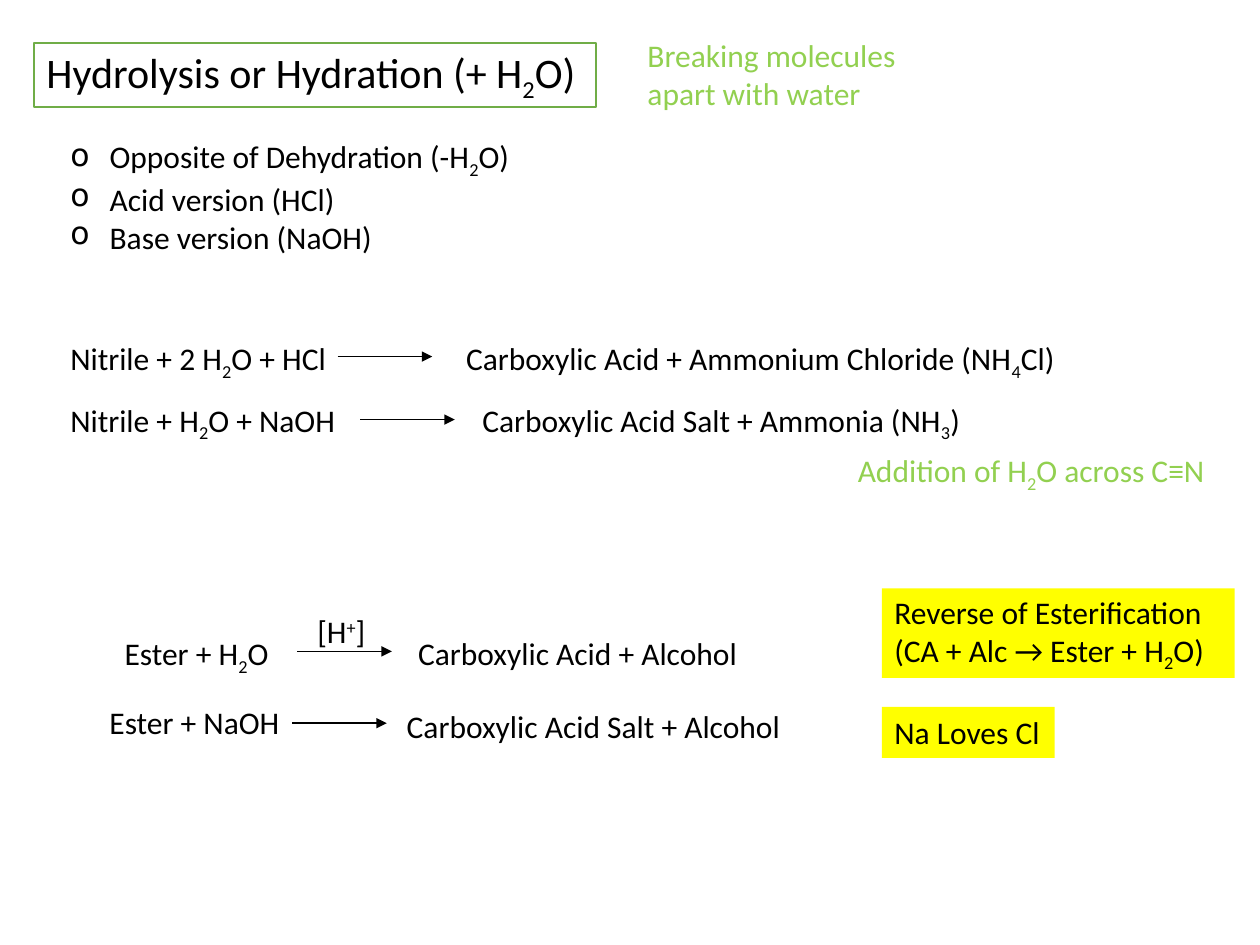
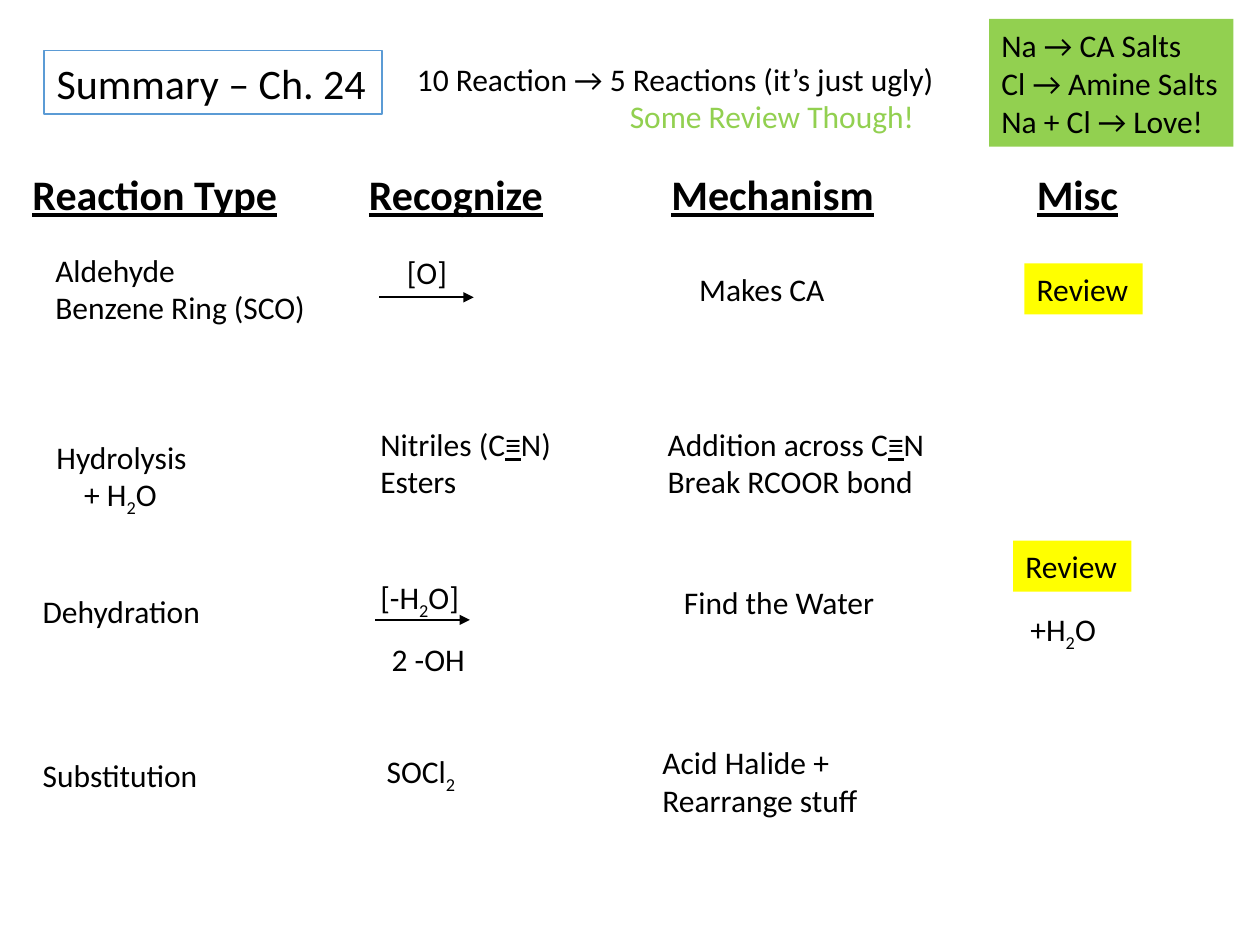
"""Build two organic chemistry review slides: hydrolysis and a chapter summary."""
import pptx
import pptx.dml.color
import pptx.enum.shapes
import pptx.enum.text
import pptx.oxml.ns
import pptx.util
from lxml import etree

SLIDE_WIDTH, SLIDE_HEIGHT = pptx.util.Inches(10), pptx.util.Inches(7.5)
COLUMNS, ROWS = 100, 75
ARROW_COLUMNS = 7.5
FONT = "Calibri"
BODY_SIZE, HEADING_SIZE = 18, 24
BLACK, WHITE, YELLOW, LIME = "000000", "FFFFFF", "FFFF00", "92D050"
GREEN, BLUE = "70AD47", "5B9BD5"
BASELINES = {"_": "-25000", "^": "30000"}
UNDERLINE = "~"


def color(hex_string):
    """Return the colour for a hex string."""
    return pptx.dml.color.RGBColor.from_string(hex_string)


def across(columns):
    """Return the length of a number of grid columns."""
    return int(SLIDE_WIDTH * columns / COLUMNS)


def down(rows):
    """Return the length of a number of grid rows."""
    return int(SLIDE_HEIGHT * rows / ROWS)


def split_marks(line):
    """Split a line into (mark, text) pairs; a mark styles the one character after it."""
    pieces, plain, letters = [], "", iter(line)
    for letter in letters:
        if letter in BASELINES or letter == UNDERLINE:
            pieces += [("", plain), (letter, next(letters))]
            plain = ""
        else:
            plain += letter
    return [piece for piece in pieces + [("", plain)] if piece[1]]


def write_line(paragraph, line, size, ink, heading):
    """Fill a paragraph with the styled runs of one line."""
    for mark, text in split_marks(line):
        run = paragraph.add_run()
        run.text = text
        run.font.name, run.font.size = FONT, pptx.util.Pt(size)
        run.font.color.rgb = color(ink)
        if heading:
            run.font.bold = run.font.underline = True
        if mark == UNDERLINE:
            run.font.underline = True
        elif mark:
            run._r.get_or_add_rPr().set("baseline", BASELINES[mark])


def fill_text(frame, lines, size, ink, wrap=False, heading=False):
    """Write lines into a text frame, one paragraph each."""
    frame.word_wrap = wrap
    frame.auto_size = pptx.enum.text.MSO_AUTO_SIZE.SHAPE_TO_FIT_TEXT
    for index, line in enumerate(lines):
        paragraph = frame.add_paragraph() if index else frame.paragraphs[0]
        paragraph.alignment = pptx.enum.text.PP_ALIGN.LEFT
        write_line(paragraph, line, size, ink, heading)


def text_height(line_count, size):
    """Return the height of a text block with its margins."""
    return pptx.util.Pt(line_count * size * 1.22) + pptx.util.Inches(0.1)


def add_note(shapes, column, row, width, *lines, size=BODY_SIZE, ink=BLACK,
             wrap=False, heading=False, rows_of_text=None):
    """Add plain text at a grid position."""
    height = text_height(rows_of_text or len(lines), size)
    note = shapes.add_textbox(across(column), down(row), across(width), height)
    fill_text(note.text_frame, lines, size, ink, wrap, heading)
    return note


def add_panel(shapes, column, row, width, *lines, fill=YELLOW, border=None, size=BODY_SIZE):
    """Add a filled rectangle with text and an optional border."""
    panel = shapes.add_shape(
        pptx.enum.shapes.MSO_SHAPE.RECTANGLE, across(column), down(row),
        across(width), text_height(len(lines), size))
    panel.shadow.inherit = False
    panel.fill.solid()
    panel.fill.fore_color.rgb = color(fill)
    if border:
        panel.line.color.rgb = color(border)
        panel.line.width = pptx.util.Pt(1)
    else:
        panel.line.fill.background()
    fill_text(panel.text_frame, lines, size, BLACK)


def add_title(shapes, column, row, width, title, border):
    """Add the framed slide title."""
    add_panel(shapes, column, row, width, title, fill=WHITE, border=border, size=HEADING_SIZE)


def add_arrow(shapes, column, row):
    """Add a reaction arrow pointing right."""
    arrow = shapes.add_connector(
        pptx.enum.shapes.MSO_CONNECTOR.STRAIGHT, across(column), down(row),
        across(column + ARROW_COLUMNS), down(row))
    arrow.line.color.rgb = color(BLACK)
    arrow.line.width = pptx.util.Pt(1)
    qn = pptx.oxml.ns.qn
    etree.SubElement(arrow.line._get_or_add_ln(), qn("a:tailEnd"), type="triangle")
    etree.SubElement(arrow._element.spPr, qn("a:effectLst"))


def add_reagent_arrow(shapes, arrow_at, label_at, width, reagent):
    """Add an arrow grouped with the reagent above it."""
    group = shapes.add_group_shape()
    add_arrow(group.shapes, *arrow_at)
    add_note(group.shapes, *label_at, width, reagent)


def add_bullets(shapes, column, row, width, *lines):
    """Add a list with hanging round bullets."""
    bullets = add_note(shapes, column, row, width, *lines)
    indent = across(3.12)
    for paragraph in bullets.text_frame.paragraphs:
        properties = paragraph._p.get_or_add_pPr()
        properties.set("marL", str(indent))
        properties.set("indent", str(-indent))
        etree.SubElement(properties, pptx.oxml.ns.qn("a:buChar"), char="o")


def build_hydrolysis(shapes):
    """Build the slide on hydrolysis reactions."""
    add_title(shapes, 2.7, 3.4, 44.6, "Hydrolysis or Hydration (+ H_2O)", GREEN)
    add_note(shapes, 50.4, 2.4, 22.9, "Breaking molecules apart with water",
             ink=LIME, wrap=True, rows_of_text=2)
    add_bullets(shapes, 4.6, 10.4, 37.4, "Opposite of Dehydration (-H_2O)",
                "Acid version (HCl)", "Base version (NaOH)")

    for column, row, width, text in (
        (4.6, 26.4, 22.7, "Nitrile + 2 H_2O + HCl"),
        (36, 26.4, 49.8, "Carboxylic Acid + Ammonium Chloride (NH_4Cl)"),
        (4.6, 31.3, 24, "Nitrile + H_2O + NaOH"),
        (37.3, 31.3, 40.5, "Carboxylic Acid Salt + Ammonia (NH_3)"),
        (8.9, 49.8, 14.3, "Ester + H_2O"),
        (32.2, 49.8, 27.6, "Carboxylic Acid + Alcohol"),
        (7.7, 55.3, 15.7, "Ester + NaOH"),
        (31.3, 55.6, 32, "Carboxylic Acid Salt + Alcohol"),
    ):
        add_note(shapes, column, row, width, text)
    for column, row in ((26.8, 28.3), (28.6, 33.3), (23.2, 57.4)):
        add_arrow(shapes, column, row)
    add_reagent_arrow(shapes, (23.6, 51.7), (24.2, 48.1), 6, "[H^+]")

    add_note(shapes, 67.1, 35.3, 30, "Addition of H_2O across C≡N", ink=LIME)
    add_panel(shapes, 70, 46.7, 28, "Reverse of Esterification", "(CA + Alc → Ester + H_2O)")
    add_panel(shapes, 70, 56.1, 13.7, "Na Loves Cl")


def build_summary(shapes):
    """Build the slide that sums up the chapter by reaction type."""
    add_title(shapes, 3.5, 4, 26.8, "Summary – Ch. 24", BLUE)
    add_note(shapes, 32.1, 4.3, 43.5, "10 Reaction → 5 Reactions (it’s just ugly)")
    add_note(shapes, 49, 7.2, 24.9, "Some Review Though!", ink=LIME)
    add_panel(shapes, 78.5, 1.5, 19.4, "Na → CA Salts", "Cl → Amine Salts",
              "Na + Cl → Love!", fill=LIME)

    for column, width, heading in ((1.6, 21.7, "Reaction Type"), (28.3, 16, "Recognize"),
                                   (52.3, 18.3, "Mechanism"), (81.3, 8.5, "Misc")):
        add_note(shapes, column, 12.9, width, heading, size=HEADING_SIZE, heading=True)

    for column, row, width, *lines in (
        (3.4, 19.4, 22.1, "Aldehyde", "Benzene Ring (SCO)"),
        (54.5, 20.9, 12.1, "Makes CA"),
        (3.5, 34.3, 12.4, "Hydrolysis"),
        (5.7, 37.2, 8, "+ H_2O"),
        (2.4, 46.5, 14.7, "Dehydration"),
        (30.1, 50.3, 7.9, "2 -OH"),
        (53.3, 45.8, 17.3, "Find the Water"),
        (80.8, 47.9, 7.4, "+H_2O"),
        (2.4, 59.5, 14.5, "Substitution"),
        (29.7, 59.2, 7.6, "SOCl_2"),
        (51.6, 58.5, 17.7, "Acid Halide +", "Rearrange stuff"),
    ):
        add_note(shapes, column, row, width, *lines)
    add_note(shapes, 29.2, 33.2, 17.6, "Nitriles (C~≡N)", "Esters", wrap=True)
    add_note(shapes, 52, 33.2, 23.8, "Addition across C~≡N", "Break RCOOR bond", wrap=True)

    add_reagent_arrow(shapes, (30.1, 23.6), (31.3, 19.6), 5.2, "[O]")
    add_reagent_arrow(shapes, (29.8, 49.2), (29.2, 45.4), 8.4, "[-H_2O]")
    for column, row in ((81.3, 20.9), (80.4, 42.9)):
        add_panel(shapes, column, row, 9.4, "Review")


def main():
    """Create the presentation and save it."""
    presentation = pptx.Presentation()
    presentation.slide_width, presentation.slide_height = SLIDE_WIDTH, SLIDE_HEIGHT
    blank = presentation.slide_layouts[6]
    for build in (build_hydrolysis, build_summary):
        build(presentation.slides.add_slide(blank).shapes)
    presentation.save("out.pptx")


if __name__ == "__main__":
    main()
